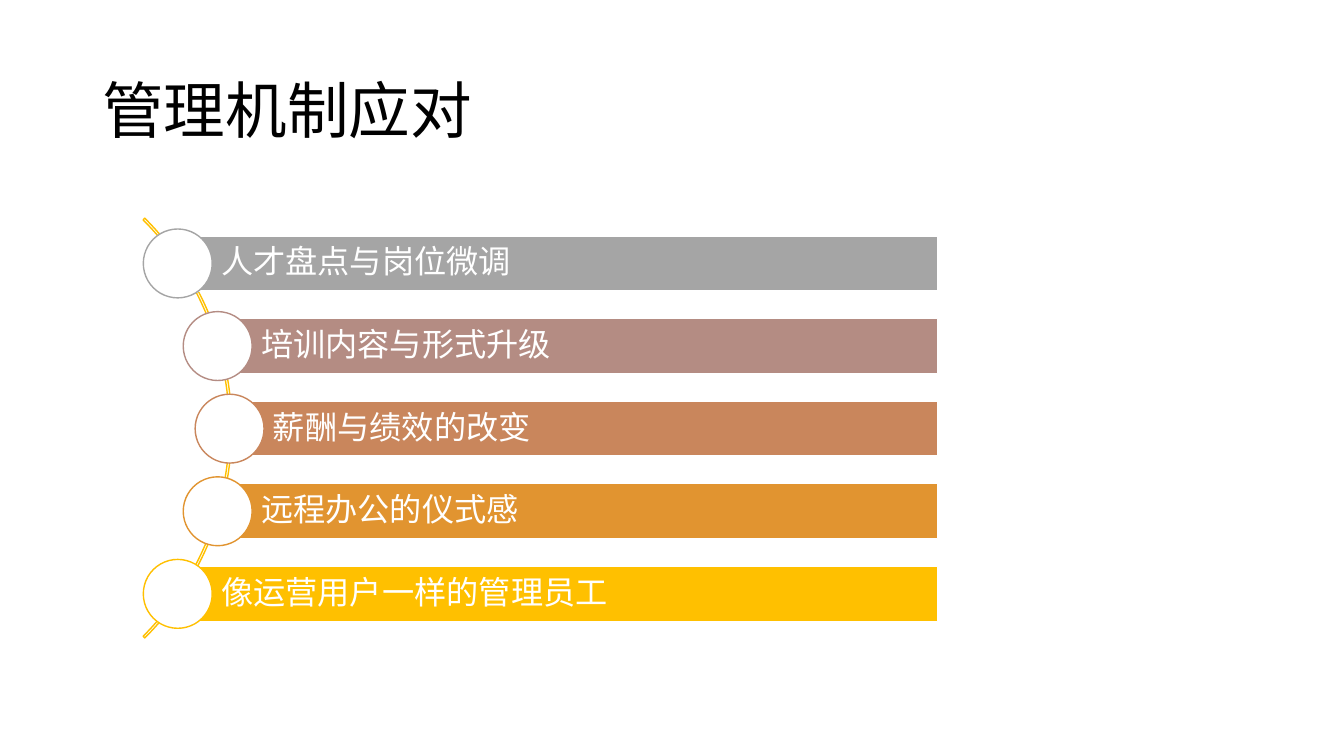
from pptx import Presentation
from pptx.dml.color import RGBColor
from pptx.enum.shapes import MSO_SHAPE
from pptx.enum.text import MSO_ANCHOR, PP_ALIGN
from pptx.oxml.ns import qn
from pptx.util import Pt
from lxml.etree import SubElement

FONT = "Noto Sans CJK SC"
COLORS = {
    "black": "000000", "white": "FFFFFF", "gray": "A5A5A5", "rose": "B48C83",
    "clay": "C9865C", "amber": "E19430", "gold": "FFC000",
}


class Deck:
    def __init__(self, wide, high):
        self.prs = Presentation()
        self.prs.slide_width, self.prs.slide_height = Pt(wide), Pt(high)
        self.slide = self.prs.slides.add_slide(self.prs.slide_layouts[6])

    def color(self, name):
        return RGBColor.from_string(COLORS[name])

    def shape(self, kind, left, top, wide, high, line, fill=None):
        item = self.slide.shapes.add_shape(
            kind, Pt(left), Pt(top), Pt(wide), Pt(high))
        item.shadow.inherit = False
        if fill:
            item.fill.solid()
            item.fill.fore_color.rgb = self.color(fill)
        else:
            item.fill.background()
        item.line.color.rgb = self.color(line)
        item.line.width = Pt(1)
        return item

    def text(self, item, words, size, color, inset=(7.2, 3.6, 7.2, 3.6)):
        frame = item.text_frame
        frame.text = words
        frame.word_wrap = True
        frame.vertical_anchor = MSO_ANCHOR.MIDDLE
        (frame.margin_left, frame.margin_top,
         frame.margin_right, frame.margin_bottom) = map(Pt, inset)
        para = frame.paragraphs[0]
        para.alignment = PP_ALIGN.LEFT
        para.line_spacing = 0.9
        font = para.runs[0].font
        font.size = Pt(size)
        font.color.rgb = self.color(color)
        font.name = FONT
        # East Asian typeface
        SubElement(font._element, qn("a:ea"), typeface=FONT)

    def title(self, words):
        box = self.slide.shapes.add_textbox(Pt(66), Pt(28.8), Pt(828), Pt(104.4))
        self.text(box, words, 44, "black")

    def arc(self, left, top, size):
        item = self.shape(MSO_SHAPE.BLOCK_ARC, left, top, size, size, "gold")
        for i, value in enumerate((189, 27, 0.004)):
            item.adjustments[i] = value

    def row(self, x, y, words, color):
        """Bar starting at x, with a circle centred on its left end."""
        bar = self.shape(MSO_SHAPE.RECTANGLE, x, y - BAR / 2,
                         RIGHT - x, BAR, "white", color)
        self.text(bar, words, 23, "white", (31, 4.3, 4.3, 4.3))
        self.shape(MSO_SHAPE.OVAL, x - DOT / 2, y - DOT / 2,
                   DOT, DOT, color, "white")


# Row layout
BAR, DOT, RIGHT = 39.4, 49.2, 669.6
FIRST, STEP = 188.2, 59
ROWS = [
    (127, "人才盘点与岗位微调", "gray"),
    (155.5, "培训内容与形式升级", "rose"),
    (164, "薪酬与绩效的改变", "clay"),
    (155.5, "远程办公的仪式感", "amber"),
    (127, "像运营用户一样的管理员工", "gold"),
]


def main():
    deck = Deck(960, 540)
    deck.title("管理机制应对")
    # Curve behind the rows
    deck.arc(-258.5, 93.8, 424)
    # Bars and circles
    for i, (x, words, color) in enumerate(ROWS):
        deck.row(x, FIRST + i * STEP, words, color)
    deck.prs.save("out.pptx")


if __name__ == "__main__":
    main()
